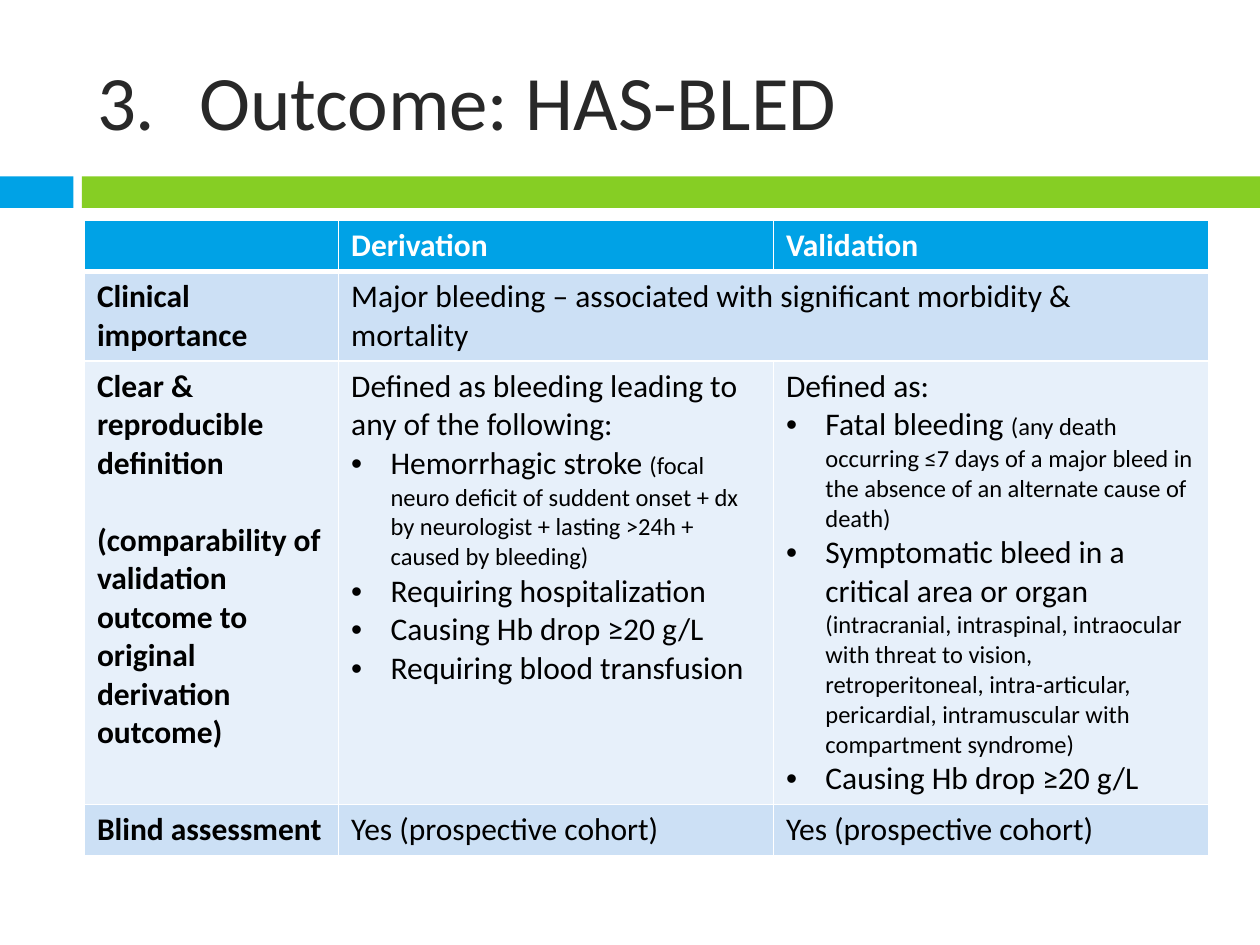
from lxml import etree
from pptx import Presentation
from pptx.dml.color import RGBColor
from pptx.enum.shapes import MSO_SHAPE
from pptx.enum.text import MSO_ANCHOR, PP_ALIGN
from pptx.oxml.ns import qn
from pptx.util import Pt

BLUE, GREEN, WHITE, BLACK = "00A2E6", "86CE24", "FFFFFF", "000000"
TITLE_COLOR = "282828"
BAND_DARK, BAND_LIGHT = "CCE0F5", "E7F0FA"
BULLET_INDENT = 22.5
BLANK_LINE = 22
BULLET = "• "  # lines starting with this become bulleted paragraphs


def rgb(value):
    return RGBColor.from_string(value)


class SlideBuilder:
    font = "Calibri"
    body_size = 18
    detail_size = 14

    def __init__(self, prs):
        self.slide = prs.slides.add_slide(prs.slide_layouts[5])

    def hang(self, paragraph, indent, tag, **attributes):
        """Give a paragraph a hanging bullet or number."""
        props = paragraph._p.get_or_add_pPr()
        props.set("marL", str(Pt(indent)))
        props.set("indent", str(-Pt(indent)))
        etree.SubElement(props, qn("a:buFont"), typeface="Arial" if tag == "a:buChar" else self.font)
        etree.SubElement(props, qn(tag), **attributes)

    def style(self, paragraph, size, color, bold=False):
        font = paragraph.font
        font.name, font.bold = self.font, bold
        font.color.rgb = rgb(color)
        if size:
            font.size = Pt(size)

    def title(self, text, number, left, top, width, height):
        title = self.slide.shapes.title
        title.left, title.top, title.width, title.height = map(Pt, (left, top, width, height))
        title.text_frame.vertical_anchor = MSO_ANCHOR.MIDDLE
        paragraph = title.text_frame.paragraphs[0]
        paragraph.text = text
        paragraph.alignment = PP_ALIGN.LEFT
        self.hang(paragraph, 58.5, "a:buAutoNum", type="arabicPeriod", startAt=str(number))
        self.style(paragraph, 44, TITLE_COLOR)

    def bar(self, left, top, width, height, color):
        bar = self.slide.shapes.add_shape(MSO_SHAPE.RECTANGLE, *map(Pt, (left, top, width, height)))
        bar.shadow.inherit = False
        bar.fill.solid()
        bar.fill.fore_color.rgb = rgb(color)
        bar.line.fill.background()

    def borders(self, cell, bottom):
        props = cell._tc.get_or_add_tcPr()
        for position, (side, width) in enumerate(zip("LRTB", (1, 1, 1, bottom))):
            line = etree.Element(qn(f"a:ln{side}"), w=str(Pt(width)))
            fill = etree.SubElement(line, qn("a:solidFill"))
            etree.SubElement(fill, qn("a:srgbClr"), val=WHITE)
            props.insert(position, line)

    def cell(self, cell, lines, fill, color, bold, bottom):
        """Fill a cell; a line is a string or a (main text, small detail) pair."""
        cell.fill.solid()
        cell.fill.fore_color.rgb = rgb(fill)
        self.borders(cell, bottom)
        frame = cell.text_frame
        for index, line in enumerate(lines):
            main, detail = (line, None) if isinstance(line, str) else line
            paragraph = frame.add_paragraph() if index else frame.paragraphs[0]
            if main.startswith(BULLET):
                self.hang(paragraph, BULLET_INDENT, "a:buChar", char="•")
            elif index:
                paragraph.space_before = Pt(BLANK_LINE)
            paragraph.add_run().text = main.removeprefix(BULLET)
            if detail:
                paragraph.add_run().text = detail
                for run, size in zip(paragraph.runs, (self.body_size, self.detail_size)):
                    run.font.size = Pt(size)
            self.style(paragraph, None if detail else self.body_size, color, bold)

    def table(self, rows, left, top, widths, heights, fills):
        table = self.slide.shapes.add_table(
            len(rows), len(widths), *map(Pt, (left, top, sum(widths), sum(heights)))).table
        for column, width in zip(table.columns, widths):
            column.width = Pt(width)
        for r, (row, height, fill) in enumerate(zip(rows, heights, fills)):
            table.rows[r].height = Pt(height)
            header = r == 0
            for c, lines in enumerate(row):
                self.cell(table.cell(r, c), lines, fill, WHITE if header else BLACK,
                          header or c == 0, 3 if header else 1)
        return table


# Outcome comparison, one list of paragraphs per cell
OUTCOMES = [
    [[], ["Derivation"], ["Validation"]],
    [["Clinical importance"],
     ["Major bleeding – associated with significant morbidity & mortality"], []],
    [["Clear & reproducible definition",
      "(comparability of validation outcome to original derivation outcome)"],
     ["Defined as bleeding leading to any of the following:",
      ("• Hemorrhagic stroke ",
       "(focal neuro deficit of suddent onset + dx by neurologist + lasting >24h + "
       "caused by bleeding)"),
      "• Requiring hospitalization",
      "• Causing Hb drop ≥20 g/L",
      "• Requiring blood transfusion"],
     ["Defined as:",
      ("• Fatal bleeding ",
       "(any death occurring ≤7 days of a major bleed in the absence of an alternate "
       "cause of death)"),
      ("• Symptomatic bleed in a critical area or organ ",
       "(intracranial, intraspinal, intraocular with threat to vision, retroperitoneal, "
       "intra-articular, pericardial, intramuscular with compartment syndrome)"),
      "• Causing Hb drop ≥20 g/L"]],
    [["Blind assessment"], ["Yes (prospective cohort)"], ["Yes (prospective cohort)"]],
]


def main():
    prs = Presentation()
    prs.slide_width, prs.slide_height = Pt(720), Pt(540)
    builder = SlideBuilder(prs)

    # Divider bars and title
    builder.bar(0, 100.8, 42, 18, BLUE)
    builder.bar(46.8, 100.8, 673.2, 18, GREEN)
    builder.title("Outcome: HAS-BLED", 3, 48.25, 18, 642.25, 78)

    # Outcome table; clinical importance is shared by both cohorts
    table = builder.table(OUTCOMES, 48.25, 126, [145.25, 248.5, 248.5],
                          [29.2, 50.8, 252, 29.2],
                          [BLUE, BAND_DARK, BAND_LIGHT, BAND_DARK])
    table.cell(1, 1).merge(table.cell(1, 2))

    prs.save("out.pptx")


if __name__ == "__main__":
    main()
